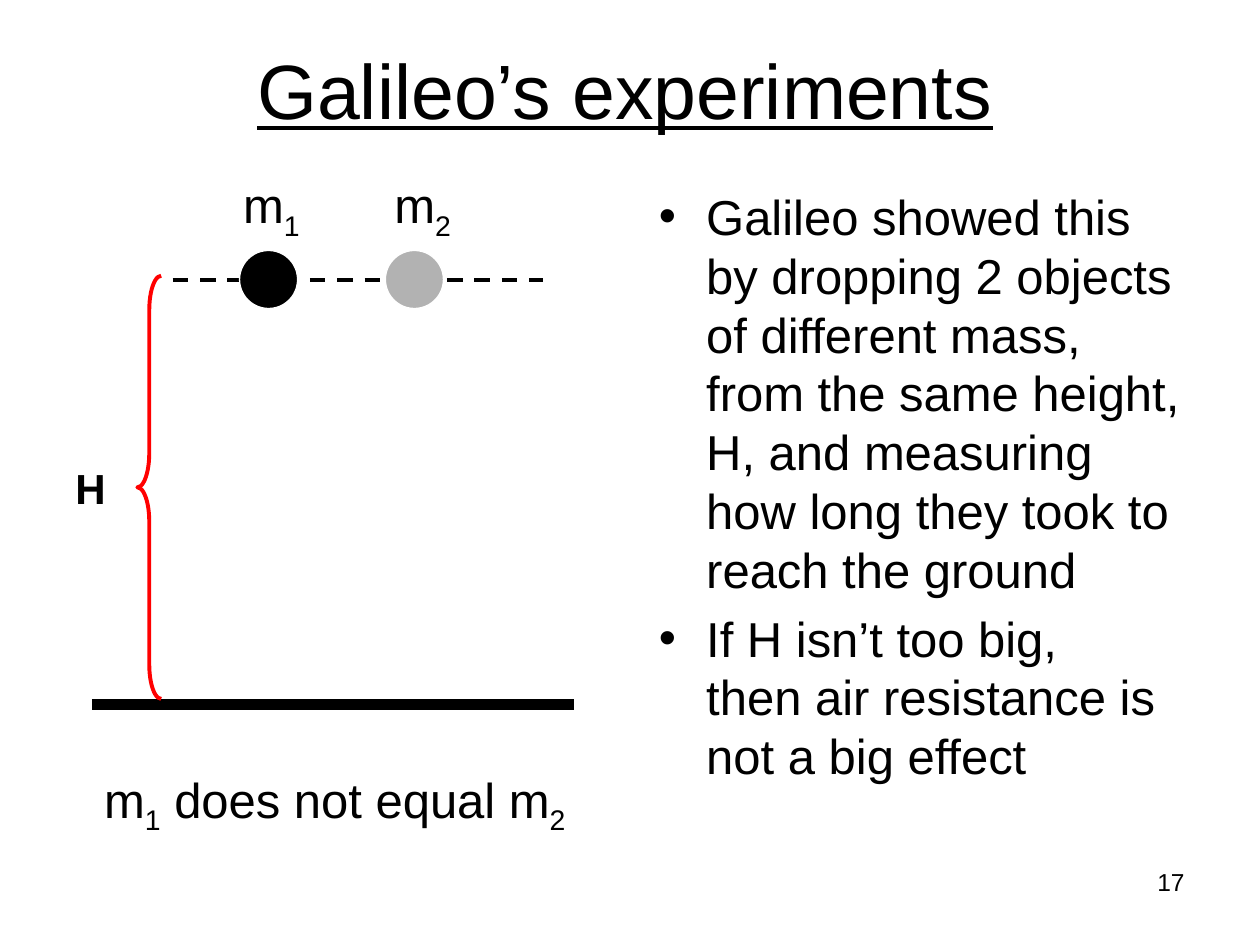
from dataclasses import dataclass

from lxml import etree
from pptx import Presentation
from pptx.dml.color import RGBColor
from pptx.enum.dml import MSO_LINE
from pptx.enum.shapes import MSO_CONNECTOR, MSO_SHAPE
from pptx.enum.text import MSO_ANCHOR, MSO_AUTO_SIZE, PP_ALIGN
from pptx.oxml.ns import qn
from pptx.util import Cm, Pt

STRAIGHT = MSO_CONNECTOR.STRAIGHT
BRACE, OVAL = MSO_SHAPE.LEFT_BRACE, MSO_SHAPE.OVAL
LEFT, CENTER, RIGHT = PP_ALIGN.LEFT, PP_ALIGN.CENTER, PP_ALIGN.RIGHT
TITLE_AND_CONTENT = 1


@dataclass(frozen=True)
class Theme:
    font: str = "Arial"
    black: RGBColor = RGBColor(0, 0, 0)
    white: RGBColor = RGBColor(255, 255, 255)
    gray: RGBColor = RGBColor(0xB2, 0xB2, 0xB2)
    red: RGBColor = RGBColor(255, 0, 0)
    title: int = 44
    body: int = 28
    height_label: int = 24
    page_number: int = 14


THEME = Theme()

BULLETS = (
    "Galileo showed this by dropping 2 objects of different mass, "
    "from the same height, H, and measuring how long they took to "
    "reach the ground",
    "If H isn’t too big,\vthen air resistance is not a big effect",
)


def place(shape, left, top, width, height):
    shape.left, shape.top = Cm(left), Cm(top)
    shape.width, shape.height = Cm(width), Cm(height)


def style(para, size, align=LEFT):
    para.alignment = align
    para.font.name = THEME.font
    para.font.size = Pt(size)
    para.font.color.rgb = THEME.black


def fill_title(title, text):
    place(title, 1.17, 0.2, 22.86, 3.18)
    frame = title.text_frame
    frame.text = text
    frame.auto_size = MSO_AUTO_SIZE.NONE
    frame.vertical_anchor = MSO_ANCHOR.MIDDLE
    para = frame.paragraphs[0]
    style(para, THEME.title, CENTER)
    para.font.underline = True


def fill_bullets(body, items):
    place(body, 13.03, 3.63, 11.23, 14.07)
    frame = body.text_frame
    frame.text = "\n".join(items)
    frame.auto_size = MSO_AUTO_SIZE.NONE
    for para in frame.paragraphs:
        style(para, THEME.body)


def add_text(page, area, pieces, size, align=LEFT, wrap=False):
    """Write pieces in turn; every second piece is a subscript."""
    box = page.shapes.add_textbox(*map(Cm, area))
    box.text_frame.word_wrap = wrap
    para = box.text_frame.paragraphs[0]
    style(para, size, align)
    for index, text in enumerate(pieces):
        span = para.add_run()
        span.text = text
        if index % 2:
            span.font.size = Pt(size)
            span._r.get_or_add_rPr().set("baseline", "-25000")
    return para


def add_level_line(page, left, right, y, weight, dash=None):
    line = page.shapes.add_connector(STRAIGHT, Cm(left), Cm(y), Cm(right), Cm(y))
    line.line.color.rgb = THEME.black
    line.line.width = Pt(weight)
    if dash:
        line.line.dash_style = dash
    etree.SubElement(line._element.spPr, qn("a:effectLst"))


def add_height_brace(page):
    brace = page.shapes.add_shape(BRACE, Cm(2.77), Cm(5.56), Cm(0.48), Cm(8.53))
    brace.adjustments[0] = 1.44
    brace.shadow.inherit = False
    brace.fill.background()
    brace.line.color.rgb = THEME.red
    brace.line.width = Pt(2.25)


def add_ball(page, left, color):
    ball = page.shapes.add_shape(OVAL, Cm(left), Cm(5.05), Cm(1.17), Cm(1.17))
    ball.shadow.inherit = False
    ball.fill.solid()
    ball.fill.fore_color.rgb = color
    ball.line.color.rgb = THEME.white
    ball.line.width = Pt(0.75)


def main():
    deck = Presentation()
    deck.slide_width, deck.slide_height = Cm(25.4), Cm(19.05)
    page = deck.slides.add_slide(deck.slide_layouts[TITLE_AND_CONTENT])

    fill_title(page.shapes.title, "Galileo’s experiments")
    fill_bullets(page.placeholders[1], BULLETS)

    add_level_line(page, 1.85, 11.58, 14.2, 6)
    add_height_brace(page)
    add_level_line(page, 3.48, 10.95, 5.64, 2.25, MSO_LINE.DASH)
    label = add_text(page, (1.27, 9.19, 1.12, 1.27), ["H"], THEME.height_label)
    label.font.bold = True

    masses = (("1", 4.83, 4.65, THEME.black), ("2", 7.77, 7.7, THEME.gray))
    for number, ball_left, label_left, color in masses:
        add_ball(page, ball_left, color)
        add_text(page, (label_left, 3.4, 1.66, 1.45), ["m", number], THEME.body)

    add_text(page, (1.85, 15.39, 10.03, 1.45),
             ["m", "1", " does not equal m", "2"], THEME.body)
    add_text(page, (18.21, 17.35, 5.92, 1.32), ["17"],
             THEME.page_number, RIGHT, wrap=True)
    deck.save("out.pptx")


if __name__ == "__main__":
    main()
